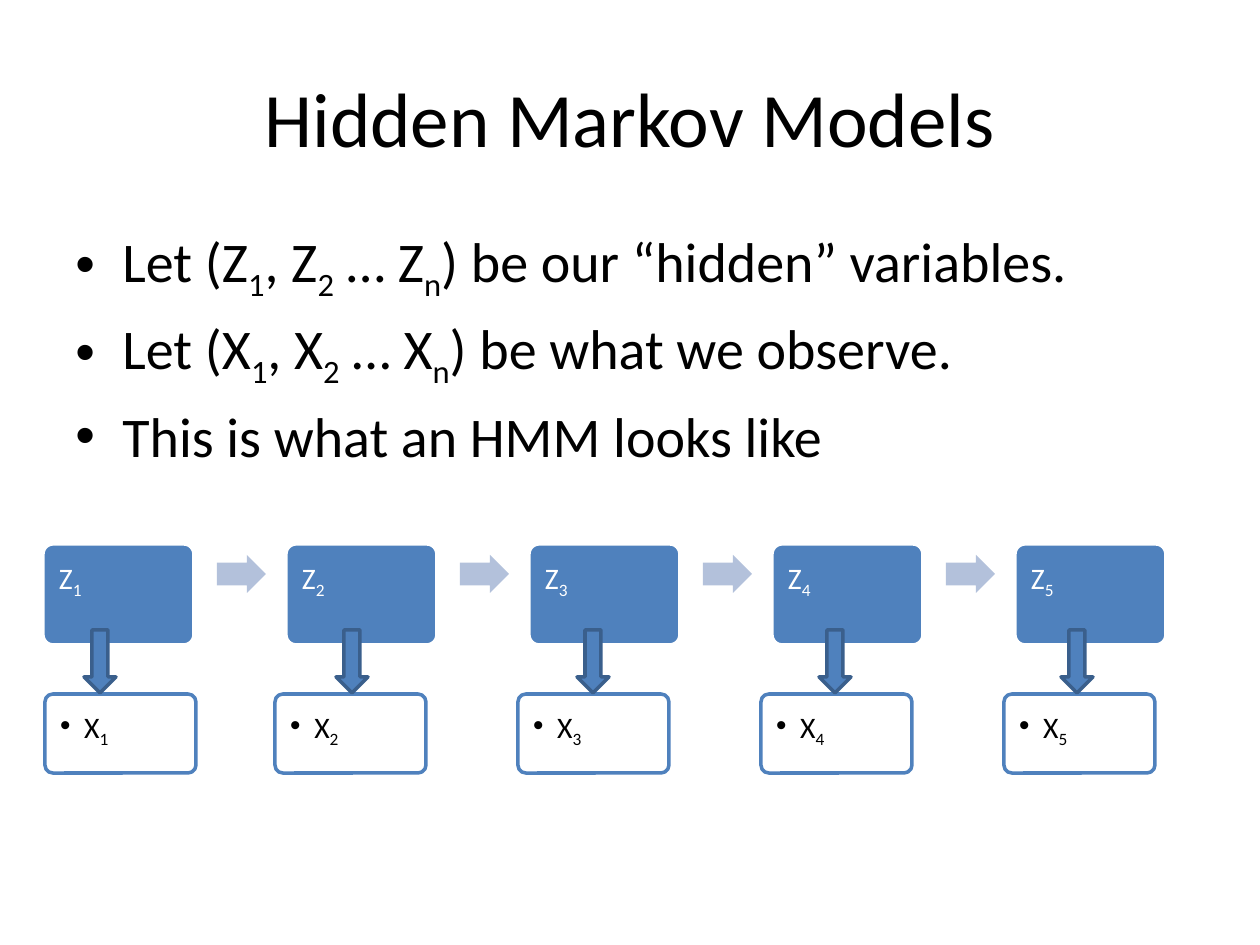
from dataclasses import dataclass

from lxml.etree import SubElement
from pptx import Presentation
from pptx.dml.color import RGBColor
from pptx.enum.shapes import MSO_SHAPE
from pptx.enum.text import MSO_ANCHOR, PP_ALIGN
from pptx.oxml.ns import qn
from pptx.util import Emu, Pt

SCALE = 914400 / 126  # EMU per px


@dataclass(frozen=True)
class Theme:
    font: str = "Calibri"
    black: str = "000000"
    white: str = "FFFFFF"
    blue: str = "4F81BD"
    pale_blue: str = "B3C1DB"
    dark_blue: str = "3A5F8C"
    title_size: int = 44
    body_size: int = 32
    node_size: int = 17
    line_width: int = 2


THEME = Theme()
BULLETS = [
    "Let (Z_1, Z_2 … Z_n) be our “hidden” variables.",
    "Let (X_1, X_2 … X_n) be what we observe.",
    "This is what an HMM looks like",
]
STATE_COUNT = 5
STATE_PITCH = 243
# Offsets from the left edge of each column
OBSERVED_OFFSETS = [2, -11, -11, -11, -11]
EMISSION_OFFSETS = [41, 50, 48, 47, 46]


def px(length):
    return Emu(round(length * SCALE))


def set_values(target, values):
    for name, value in values.items():
        setattr(target, name, value)


def add_text(paragraph, text, size, color):
    """Write text in which the character after each underscore is a subscript."""
    first, *rest = text.split("_")
    pieces = [(first, False)]
    for part in rest:
        pieces += [(part[0], True), (part[1:], False)]
    for piece, is_subscript in pieces:
        if not piece:
            continue
        run = paragraph.add_run()
        run.text = piece
        set_values(run.font, {"size": Pt(size), "name": THEME.font})
        run.font.color.rgb = RGBColor.from_string(color)
        if is_subscript:
            run.font._element.set("baseline", "-25000")


def add_bullet(paragraph, indent):
    properties = paragraph._p.get_or_add_pPr()
    properties.set("marL", str(px(indent)))
    properties.set("indent", str(-px(indent)))
    SubElement(properties, qn("a:buFont")).set("typeface", "Arial")
    SubElement(properties, qn("a:buChar")).set("char", "•")


def add_text_frame(slide, box, anchor):
    frame = slide.shapes.add_textbox(*map(px, box)).text_frame
    set_values(frame, {"word_wrap": True, "vertical_anchor": anchor})
    return frame


def add_filled_shape(slide, kind, box, fill, line=None, adjustments=()):
    shape = slide.shapes.add_shape(kind, *map(px, box))
    shape.shadow.inherit = False
    shape.fill.solid()
    shape.fill.fore_color.rgb = RGBColor.from_string(fill)
    if line:
        shape.line.color.rgb = RGBColor.from_string(line)
        shape.line.width = Pt(THEME.line_width)
    else:
        shape.line.fill.background()
    for index, value in enumerate(adjustments):
        shape.adjustments[index] = value
    return shape


def add_title(slide, box):
    paragraph = add_text_frame(slide, box, MSO_ANCHOR.MIDDLE).paragraphs[0]
    paragraph.alignment = PP_ALIGN.CENTER
    add_text(paragraph, "Hidden Markov Models", THEME.title_size, THEME.black)


def add_body(slide, box):
    frame = add_text_frame(slide, box, MSO_ANCHOR.TOP)
    for index, text in enumerate(BULLETS):
        paragraph = frame.add_paragraph() if index else frame.paragraphs[0]
        paragraph.space_before = Pt(0.2 * THEME.body_size)
        add_bullet(paragraph, 47)
        add_text(paragraph, text, THEME.body_size, THEME.black)


def add_node(slide, box, label, fill, line, text_color, bulleted=False):
    shape = add_filled_shape(slide, MSO_SHAPE.ROUNDED_RECTANGLE, box, fill, line, [0.1])
    frame = shape.text_frame
    set_values(frame, {
        "word_wrap": True,
        "vertical_anchor": MSO_ANCHOR.TOP,
        "margin_left": px(13),
        "margin_top": px(13),
        "margin_right": px(13),
        "margin_bottom": px(9),
    })
    paragraph = frame.paragraphs[0]
    set_values(paragraph, {"alignment": PP_ALIGN.LEFT, "line_spacing": 0.9})
    if bulleted:
        add_bullet(paragraph, 24)
    add_text(paragraph, label, THEME.node_size, text_color)


def add_chain(slide, left, top):
    """Draw the hidden states in a row, each above the value it emits."""
    for index in range(STATE_COUNT):
        number = index + 1
        x = left + index * STATE_PITCH
        add_node(slide, (x, top, 151, 101), f"Z_{number}",
                 THEME.blue, THEME.white, THEME.white)
        add_node(slide, (x + OBSERVED_OFFSETS[index], top + 150, 151, 79), f"X_{number}",
                 THEME.white, THEME.blue, THEME.black, bulleted=True)
        add_filled_shape(slide, MSO_SHAPE.DOWN_ARROW,
                         (x + EMISSION_OFFSETS[index], top + 86, 32, 63),
                         THEME.blue, THEME.dark_blue)
        if number < STATE_COUNT:
            add_filled_shape(slide, MSO_SHAPE.RIGHT_ARROW, (x + 174, top + 11, 49, 38),
                             THEME.pale_blue, adjustments=[0.6, 0.5])


def main():
    presentation = Presentation()
    set_values(presentation, {"slide_width": px(1260), "slide_height": px(945)})
    slide = presentation.slides.add_slide(presentation.slide_layouts[6])
    add_title(slide, (63, 38, 1134, 157))
    add_body(slide, (63, 220, 1134, 624))
    add_chain(slide, 43, 544)
    presentation.save("out.pptx")


if __name__ == "__main__":
    main()
